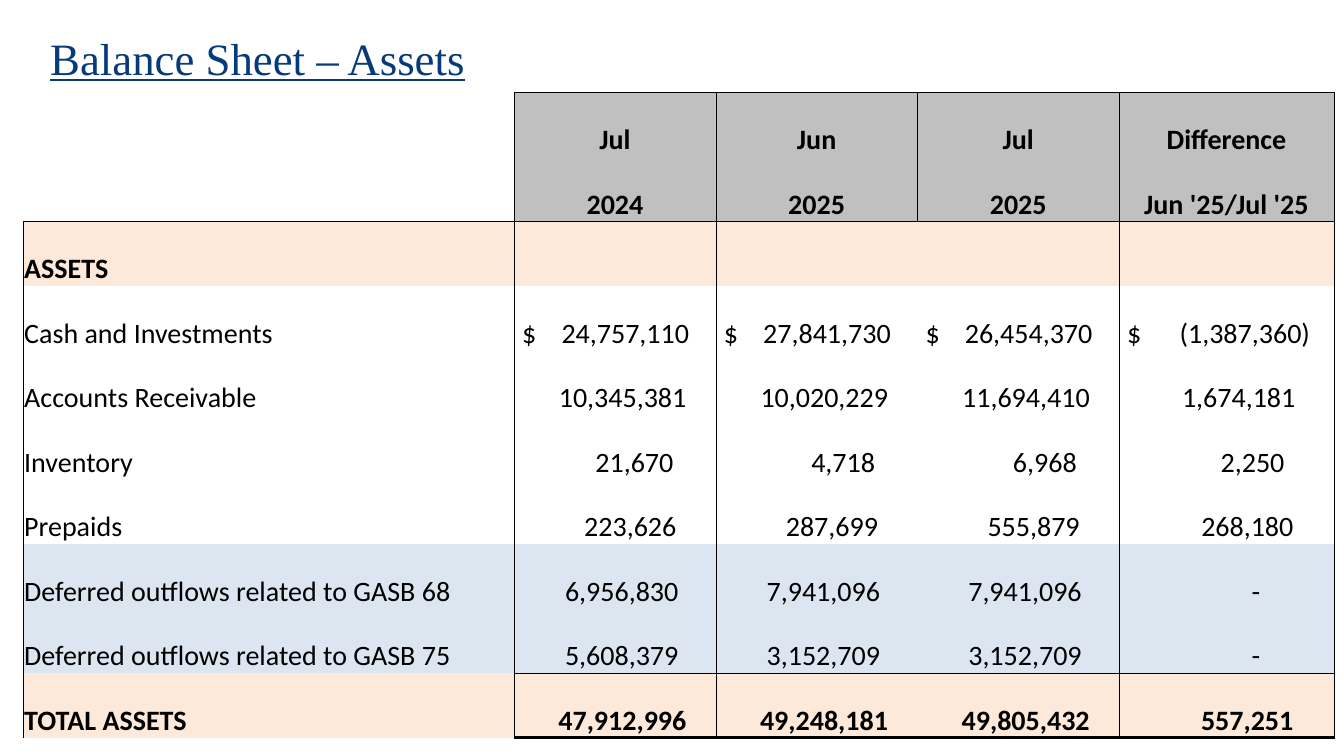
import dataclasses

import lxml.etree
import pptx
import pptx.dml.color
import pptx.enum.text
import pptx.oxml.ns
import pptx.util

Inches = pptx.util.Inches
Align = pptx.enum.text.PP_ALIGN
Anchor = pptx.enum.text.MSO_ANCHOR
qn = pptx.oxml.ns.qn


@dataclasses.dataclass(frozen=True)
class Theme:
    title_font: str = "Times New Roman"
    body_font: str = "Calibri"
    title_size: int = 32
    body_size: int = 20
    title_color: str = "063A7A"
    ink: str = "000000"
    header_fill: str = "C0C0C0"
    section_fill: str = "FDE9D9"
    deferred_fill: str = "DCE6F1"
    thin: float = 0.5
    thick: float = 2
    plain_table_style: str = "{2D5ABB26-0587-4C30-8999-92F81FD0307C}"


@dataclasses.dataclass
class BalanceRow:
    """Insets are the gaps right of the amounts: months first, then difference."""
    label: str
    amounts: tuple = ("", "", "", "")
    insets: tuple = (0.01, 0.01)
    fill: str = ""
    bold: bool = False


HEADERS = [("Jul", "Jun", "Jul", "Difference"),
           ("2024", "2025", "2025", "Jun '25/Jul '25")]
ROWS = [
    BalanceRow("ASSETS", fill=Theme.section_fill, bold=True),
    BalanceRow("Cash and Investments",
               ("$\t24,757,110", "$\t27,841,730", "$\t26,454,370", "$\t(1,387,360)")),
    BalanceRow("Accounts Receivable",
               ("10,345,381", "10,020,229", "11,694,410", "1,674,181"), (0.29, 0.38)),
    BalanceRow("Inventory", ("21,670", "4,718", "6,968", "2,250"), (0.42, 0.49)),
    BalanceRow("Prepaids", ("223,626", "287,699", "555,879", "268,180"), (0.39, 0.4)),
    BalanceRow("Deferred outflows related to GASB 68",
               ("6,956,830", "7,941,096", "7,941,096", "-"), (0.37, 0.73), Theme.deferred_fill),
    BalanceRow("Deferred outflows related to GASB 75",
               ("5,608,379", "3,152,709", "3,152,709", "-"), (0.37, 0.73), Theme.deferred_fill),
    BalanceRow("TOTAL ASSETS", ("47,912,996", "49,248,181", "49,805,432", "557,251"),
               (0.29, 0.4), Theme.section_fill, True),
]
COLUMN_WIDTHS = [4.87, 2, 2, 2, 2.13]
ROW_HEIGHT = 0.64
CURRENCY_INSET = 0.08
CURRENCY_TABS = (0.39, 0.52)


def write_text(frame, text, *, font, size, color, bold=False, underline=False,
               align=Align.LEFT, line_spacing=None, tab=None):
    paragraph = frame.paragraphs[0]
    paragraph.alignment = align
    if line_spacing:
        paragraph.line_spacing = line_spacing
    if tab is not None:
        properties = paragraph._p.get_or_add_pPr()
        tabs = lxml.etree.SubElement(properties, qn("a:tabLst"))
        lxml.etree.SubElement(tabs, qn("a:tab"), pos=str(Inches(tab)), algn="l")
    run = paragraph.add_run()
    run.text = text
    run.font.name = font
    run.font.size = pptx.util.Pt(size)
    run.font.bold = bold
    run.font.underline = underline
    run.font.color.rgb = pptx.dml.color.RGBColor.from_string(color)


class SlideBuilder:
    def __init__(self, slide, theme):
        self.slide = slide
        self.theme = theme

    def title(self, text, left, top, width, height):
        shape = self.slide.shapes.add_textbox(
            Inches(left), Inches(top), Inches(width), Inches(height))
        frame = shape.text_frame
        frame.word_wrap = True
        frame.vertical_anchor = Anchor.MIDDLE
        write_text(frame, text, font=self.theme.title_font, size=self.theme.title_size,
                   color=self.theme.title_color, underline=True, line_spacing=0.9)

    def table(self, left, top, row_count, column_widths, row_height):
        table = self.slide.shapes.add_table(
            row_count, len(column_widths), Inches(left), Inches(top),
            Inches(sum(column_widths)), Inches(row_height * row_count)).table
        table.first_row = table.horz_banding = False
        table._tbl.tblPr.find(qn("a:tableStyleId")).text = self.theme.plain_table_style
        for column, width in zip(table.columns, column_widths):
            column.width = Inches(width)
        for row in table.rows:
            row.height = Inches(row_height)
        return table

    def cell(self, cell, text, *, fill="", borders=None, left=0.01, right=0.01, **text_format):
        cell.margin_left, cell.margin_right = Inches(left), Inches(right)
        cell.margin_top, cell.margin_bottom = Inches(0.01), 0
        cell.vertical_anchor = Anchor.BOTTOM
        self.borders(cell, borders or {})
        if fill:
            cell.fill.solid()
            cell.fill.fore_color.rgb = pptx.dml.color.RGBColor.from_string(fill)
        else:
            cell.fill.background()
        if text:
            write_text(cell.text_frame, text, font=self.theme.body_font,
                       size=self.theme.body_size, color=self.theme.ink, **text_format)

    def borders(self, cell, widths):
        """Draw the sides named in widths (L, R, T, B) and clear the others."""
        properties = cell._tc.get_or_add_tcPr()
        for side in "LRTB":
            width = widths.get(side, 0)
            line = lxml.etree.SubElement(
                properties, qn(f"a:ln{side}"), w=str(pptx.util.Pt(width)))
            if width:
                solid = lxml.etree.SubElement(line, qn("a:solidFill"))
                lxml.etree.SubElement(solid, qn("a:srgbClr"), val=self.theme.ink)
            else:
                lxml.etree.SubElement(line, qn("a:noFill"))


def cell_borders(row, column, theme):
    """Month and difference rules; the two 2025 columns share one box below the header."""
    header_count = len(HEADERS)
    last_row = header_count + len(ROWS) - 1
    in_header = row < header_count
    widths = {}
    if column or not in_header:
        widths["L"] = theme.thin if in_header or column != 3 else 0
    widths["R"] = theme.thin if in_header or column != 2 else 0
    if row == header_count or column and row in (0, last_row):
        widths["T"] = theme.thin
    if row == header_count - 1 or column and row == last_row - 1:
        widths["B"] = theme.thin
    if column and row == last_row:
        widths["B"] = theme.thick
    return widths


def add_balance_table(builder):
    theme = builder.theme
    header_count = len(HEADERS)
    table = builder.table(0.23, 0.92, header_count + len(ROWS), COLUMN_WIDTHS, ROW_HEIGHT)
    for row, names in enumerate(HEADERS):
        for column, name in enumerate(("",) + names):
            builder.cell(table.cell(row, column), name, bold=True, align=Align.CENTER,
                         fill=theme.header_fill if column else "",
                         borders=cell_borders(row, column, theme))
    for row, entry in enumerate(ROWS, header_count):
        for column, text in enumerate((entry.label,) + entry.amounts):
            is_difference = column == len(COLUMN_WIDTHS) - 1
            layout = {}
            if "\t" in text:
                layout = {"left": CURRENCY_INSET, "tab": CURRENCY_TABS[is_difference]}
            elif column:
                layout = {"right": entry.insets[is_difference], "align": Align.RIGHT}
            builder.cell(table.cell(row, column), text, bold=entry.bold, fill=entry.fill,
                         borders=cell_borders(row, column, theme), **layout)


def main():
    presentation = pptx.Presentation()
    presentation.slide_width = Inches(13.33)
    presentation.slide_height = Inches(7.5)
    slide = presentation.slides.add_slide(presentation.slide_layouts[6])
    builder = SlideBuilder(slide, Theme())
    builder.title("Balance Sheet – Assets", 0.4, 0.06, 9.87, 1.08)
    add_balance_table(builder)
    presentation.save("out.pptx")


if __name__ == "__main__":
    main()
